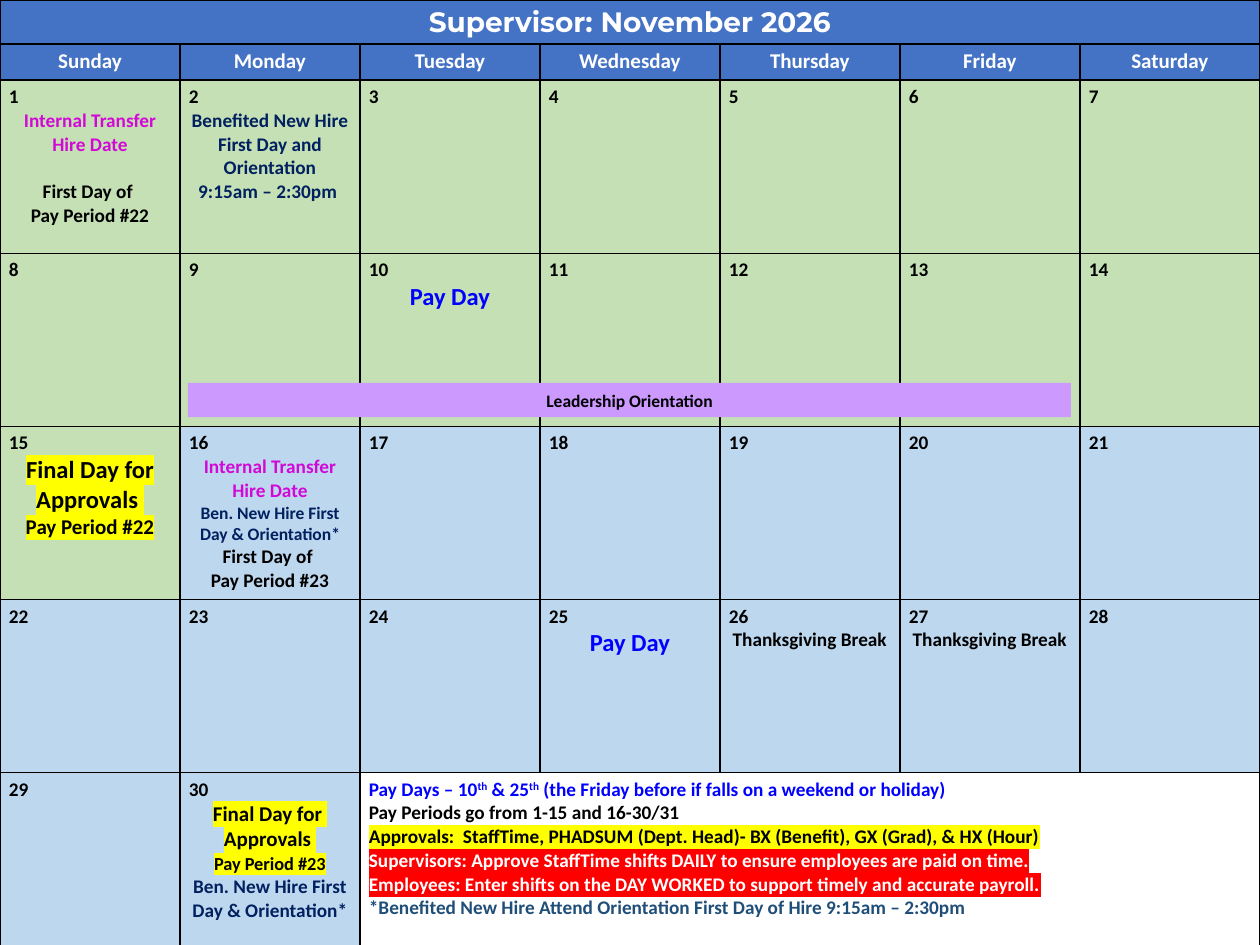
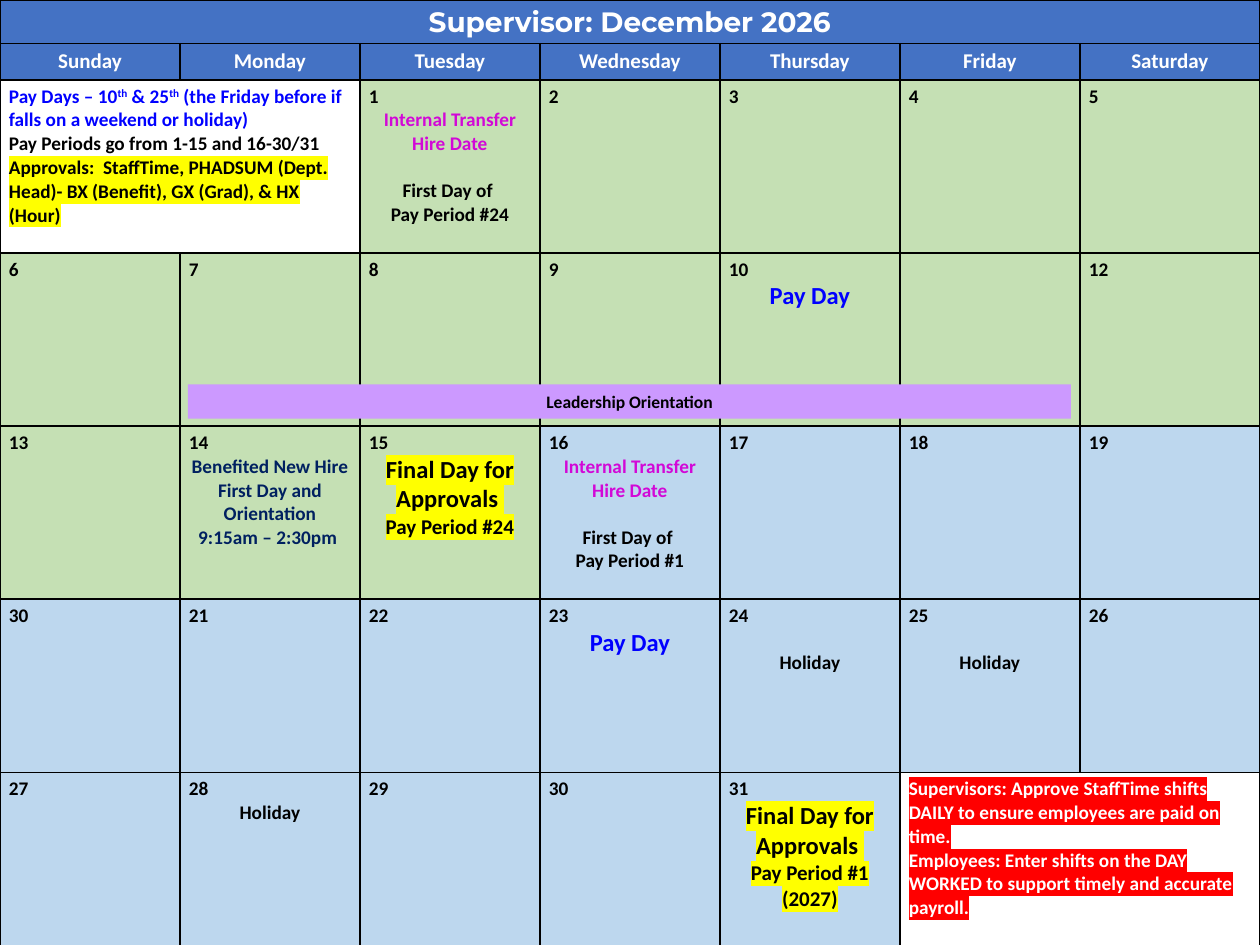
"""Build the supervisor payroll calendars for November and December 2026."""
from typing import NamedTuple

from lxml import etree
from pptx import Presentation
from pptx.dml.color import RGBColor
from pptx.enum.shapes import MSO_SHAPE
from pptx.enum.text import MSO_ANCHOR, MSO_AUTO_SIZE, PP_ALIGN
from pptx.oxml.ns import qn
from pptx.util import Cm, Pt

LEFT, CENTER = PP_ALIGN.LEFT, PP_ALIGN.CENTER
MIDDLE, GROW = MSO_ANCHOR.MIDDLE, MSO_AUTO_SIZE.SHAPE_TO_FIT_TEXT
RECTANGLE = MSO_SHAPE.RECTANGLE

BLACK = RGBColor(0x00, 0x00, 0x00)
WHITE = RGBColor(0xFF, 0xFF, 0xFF)
HEADER_BLUE = RGBColor(0x44, 0x72, 0xC4)
FIRST_HALF_GREEN = RGBColor(0xC5, 0xE0, 0xB4)
SECOND_HALF_BLUE = RGBColor(0xBD, 0xD7, 0xEE)
TRANSFER_PINK = RGBColor(0xD2, 0x08, 0xD7)
HIRE_NAVY = RGBColor(0x00, 0x20, 0x60)
PAY_BLUE = RGBColor(0x00, 0x00, 0xFF)
FOOTNOTE_BLUE = RGBColor(0x1F, 0x4E, 0x79)
LEADERSHIP_PURPLE = RGBColor(0xCC, 0x99, 0xFF)
YELLOW = RGBColor(0xFF, 0xFF, 0x00)
RED = RGBColor(0xFF, 0x00, 0x00)

WIDTH, HEIGHT = 25.4, 19.05
TITLE_HEIGHT, WEEKDAY_HEIGHT, WEEK_HEIGHT = 0.87, 0.73, 3.49
WEEKDAYS = ["Sunday", "Monday", "Tuesday", "Wednesday", "Thursday", "Friday", "Saturday"]
WEEKS = 5
HALF_MONTH = 15
BLANK_LAYOUT = 6
LINE_GAP = Pt(13.4)


class Line(NamedTuple):
    """One paragraph; text between carets is superscript."""
    text: str
    color: RGBColor = BLACK
    size: float = 11
    highlight: RGBColor = None
    gap: bool = False
    font: str = "Calibri"


class Note(NamedTuple):
    """A note that covers several days of one week."""
    week: int
    first: int
    last: int
    lines: list


class Month(NamedTuple):
    """The content of one calendar slide."""
    name: str
    first_weekday: int
    events: dict
    notes: list
    bar_top: float
    labels: dict = {}


class CalendarDeck:
    """Holds the calendar style and the current slide."""

    margins = {"margin_left": Cm(0.18), "margin_right": Cm(0.18),
               "margin_top": Cm(0.1), "margin_bottom": Cm(0.1)}

    def __init__(self):
        self.deck = Presentation()
        self.deck.slide_width, self.deck.slide_height = Cm(WIDTH), Cm(HEIGHT)
        self.slide = None

    def add_slide(self):
        self.slide = self.deck.slides.add_slide(self.deck.slide_layouts[BLANK_LAYOUT])

    def add_text(self, paragraph, text, line, raised):
        run = paragraph.add_run()
        run.text = text
        values = {"name": line.font, "size": Pt(line.size), "bold": True}
        for name, value in values.items():
            setattr(run.font, name, value)
        run.font.color.rgb = line.color
        properties = run.font._element
        if raised:
            properties.set("baseline", "30000")
        if line.highlight is not None:
            highlight = etree.Element(qn("a:highlight"))
            etree.SubElement(highlight, qn("a:srgbClr"), val=str(line.highlight))
            properties.find(qn("a:solidFill")).addnext(highlight)

    def add_lines(self, frame, lines, alignments):
        for index, (line, alignment) in enumerate(zip(lines, alignments)):
            paragraph = frame.add_paragraph() if index else frame.paragraphs[0]
            paragraph.alignment = alignment
            if line.gap:
                paragraph.space_before = LINE_GAP
            for part, text in enumerate(line.text.split("^")):
                self.add_text(paragraph, text, line, part % 2 == 1)

    def borders(self, cell):
        properties = cell._tc.get_or_add_tcPr()
        for side in ("L", "R", "T", "B"):
            border = etree.SubElement(properties, qn(f"a:ln{side}"), w=str(Pt(1)))
            fill = etree.SubElement(border, qn("a:solidFill"))
            etree.SubElement(fill, qn("a:srgbClr"), val=str(BLACK))

    def fill(self, area, color):
        area.fill.solid()
        area.fill.fore_color.rgb = color

    def fill_cell(self, cell, color, lines, alignments):
        self.fill(cell, color)
        self.add_lines(cell.text_frame, lines, alignments)

    def grid(self):
        grid = self.slide.shapes.add_table(
            WEEKS + 2, len(WEEKDAYS), 0, 0, Cm(WIDTH), Cm(HEIGHT)).table
        grid.first_row = grid.horz_banding = False
        for column in grid.columns:
            column.width = Cm(WIDTH / len(WEEKDAYS))
        heights = [TITLE_HEIGHT, WEEKDAY_HEIGHT] + [WEEK_HEIGHT] * WEEKS
        for row, height in zip(grid.rows, heights):
            row.height = Cm(height)
        for cell in grid.iter_cells():
            for name, value in self.margins.items():
                setattr(cell, name, value)
            self.borders(cell)
        return grid

    def headings(self, grid, month):
        grid.cell(0, 0).merge(grid.cell(0, len(WEEKDAYS) - 1))
        title = Line(f"Supervisor: {month.name} 2026", WHITE, 16, font="Montserrat")
        self.fill_cell(grid.cell(0, 0), HEADER_BLUE, [title], [CENTER])
        for column, weekday in enumerate(WEEKDAYS):
            self.fill_cell(grid.cell(1, column), HEADER_BLUE,
                           [Line(weekday, WHITE, 12)], [CENTER])

    def days(self, grid, month):
        covered = {(note.week, column) for note in month.notes
                   for column in range(note.first, note.last + 1)}
        for week in range(WEEKS):
            for column in range(len(WEEKDAYS)):
                if (week, column) in covered:
                    continue
                day = week * len(WEEKDAYS) + column - month.first_weekday + 1
                color = FIRST_HALF_GREEN if day <= HALF_MONTH else SECOND_HALF_BLUE
                events = month.events.get(day, [])
                label = month.labels.get(day, str(day))
                lines = [Line(label)] + events if label else events
                self.fill_cell(grid.cell(week + 2, column), color, lines,
                               [LEFT] + [CENTER] * len(events))

    def note(self, grid, note):
        row = note.week + 2
        grid.cell(row, note.first).merge(grid.cell(row, note.last))
        self.fill_cell(grid.cell(row, note.first), WHITE, note.lines,
                       [LEFT] * len(note.lines))

    def bar(self, text, top):
        bar = self.slide.shapes.add_shape(RECTANGLE, Cm(3.79), Cm(top), Cm(17.8), Cm(0.69))
        bar.shadow.inherit = False
        self.fill(bar, LEADERSHIP_PURPLE)
        bar.line.fill.background()
        frame = bar.text_frame
        values = {"word_wrap": True, "auto_size": GROW, "vertical_anchor": MIDDLE}
        for name, value in values.items():
            setattr(frame, name, value)
        self.add_lines(frame, [Line(text, size=10)], [CENTER])

    def calendar(self, month):
        self.add_slide()
        grid = self.grid()
        self.headings(grid, month)
        self.days(grid, month)
        for note in month.notes:
            self.note(grid, note)
        self.bar("Leadership Orientation", month.bar_top)


TRANSFER = Line("Internal Transfer Hire Date", TRANSFER_PINK)
PAY_DAY = [Line("Pay Day", PAY_BLUE, 14)]
THANKSGIVING = [Line("Thanksgiving Break")]
NEW_HIRE = [Line("Benefited New Hire First Day and Orientation", HIRE_NAVY),
            Line("9:15am – 2:30pm ", HIRE_NAVY)]
SHORT_NEW_HIRE = Line("Ben. New Hire First Day & Orientation*", HIRE_NAVY)
PAY_RULES = [
    Line("Pay Days – 10^th^ & 25^th^ (the Friday before if falls on a weekend or holiday)", PAY_BLUE),
    Line("Pay Periods go from 1-15 and 16-30/31"),
    Line("Approvals:  StaffTime, PHADSUM (Dept. Head)- BX (Benefit), GX (Grad), & HX (Hour)",
         highlight=YELLOW),
]
SHIFT_RULES = [
    Line("Supervisors: Approve StaffTime shifts DAILY to ensure employees are paid on time.",
         WHITE, highlight=RED),
    Line("Employees: Enter shifts on the DAY WORKED to support timely and accurate payroll.",
         WHITE, highlight=RED),
]
ORIENTATION_FOOTNOTE = Line(
    "*Benefited New Hire Attend Orientation First Day of Hire 9:15am – 2:30pm", FOOTNOTE_BLUE)


def period_start(number, gap=True):
    """Return the lines for the first day of a pay period."""
    return [Line("First Day of ", gap=gap), Line(f"Pay Period #{number}")]


def final_day(number):
    """Return the lines for the last approval day of a pay period."""
    return [Line("Final Day for Approvals ", size=14, highlight=YELLOW),
            Line(f"Pay Period #{number}", size=12, highlight=YELLOW)]


NOVEMBER = Month(
    "November", 0,
    {1: [TRANSFER] + period_start(22),
     2: NEW_HIRE,
     10: PAY_DAY,
     15: final_day(22),
     16: [TRANSFER, SHORT_NEW_HIRE._replace(size=10)] + period_start(23, gap=False),
     25: PAY_DAY,
     26: THANKSGIVING,
     27: THANKSGIVING,
     30: [Line("Final Day for ", size=12, highlight=YELLOW),
          Line("Approvals ", size=12, highlight=YELLOW),
          Line("Pay Period #23", size=10.5, highlight=YELLOW),
          SHORT_NEW_HIRE]},
    [Note(4, 2, 6, PAY_RULES + SHIFT_RULES + [ORIENTATION_FOOTNOTE])],
    7.72)

DECEMBER = Month(
    "December", 2,
    {1: [TRANSFER] + period_start(24),
     10: PAY_DAY,
     14: NEW_HIRE,
     15: final_day(24),
     16: [TRANSFER] + period_start(1),
     23: PAY_DAY,
     24: [Line("Holiday", gap=True)],
     25: [Line("Holiday", gap=True)],
     28: [Line("Holiday")],
     31: final_day(1) + [Line("(2027)", size=12, highlight=YELLOW)]},
    [Note(0, 0, 1, PAY_RULES), Note(4, 5, 6, SHIFT_RULES)],
    7.75,
    {11: "", 20: "30"})


def main():
    """Draw both months and save the deck."""
    calendars = CalendarDeck()
    for month in (NOVEMBER, DECEMBER):
        calendars.calendar(month)
    calendars.deck.save("out.pptx")


if __name__ == "__main__":
    main()
